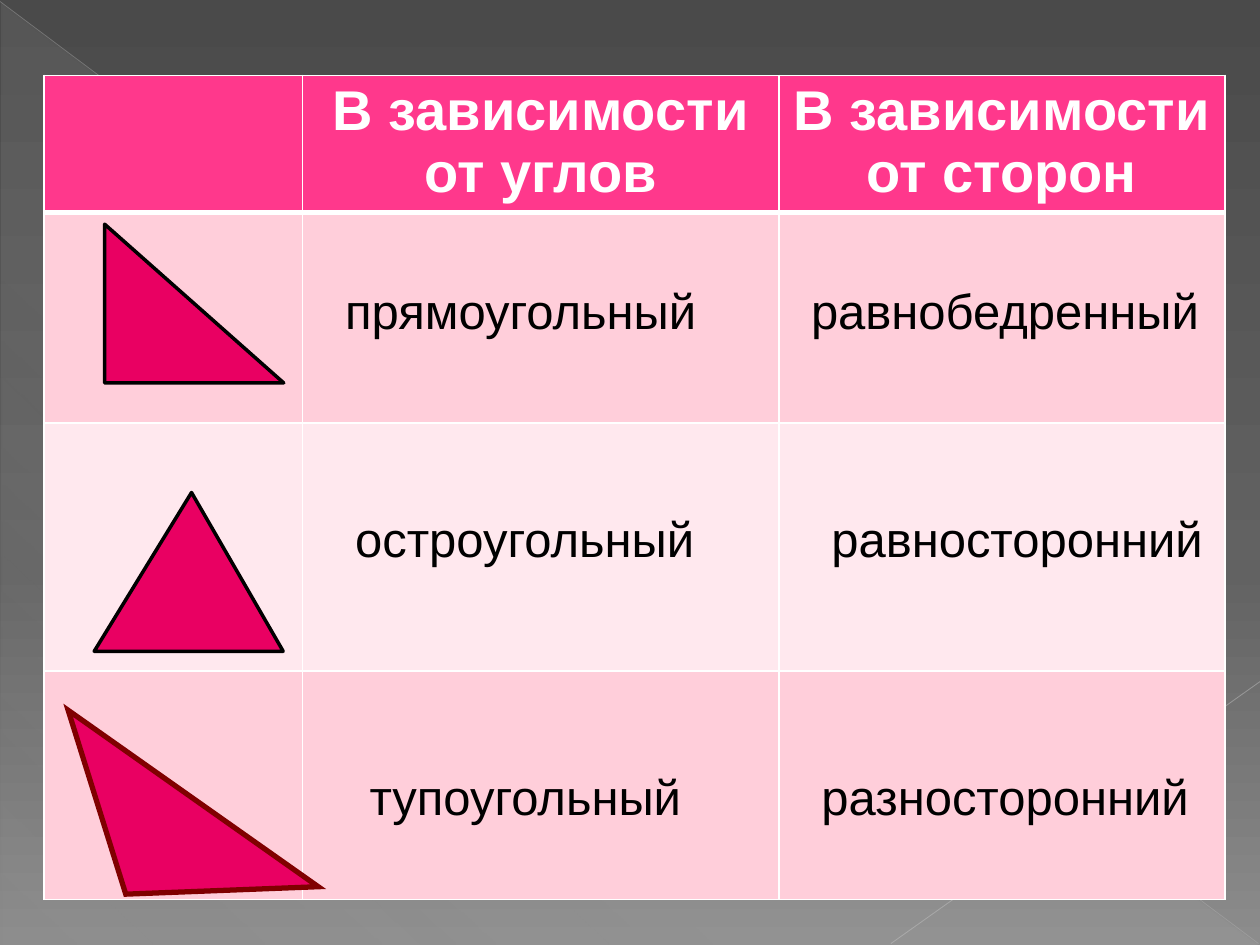
from lxml import etree
from pptx import Presentation
from pptx.dml.color import RGBColor
from pptx.enum.shapes import MSO_CONNECTOR, MSO_SHAPE
from pptx.enum.text import PP_ALIGN
from pptx.oxml.ns import qn
from pptx.util import Cm, Pt

CENTER, LEFT = PP_ALIGN.CENTER, PP_ALIGN.LEFT
RIGHT_TRIANGLE = MSO_SHAPE.RIGHT_TRIANGLE
TRIANGLE = MSO_SHAPE.ISOSCELES_TRIANGLE
STRAIGHT = MSO_CONNECTOR.STRAIGHT


def rgb(value):
    """Turn a hex string into a colour."""
    return RGBColor.from_string(value)


def add_color(parent, value, opacity=100):
    """Append a colour element with an opacity in percent."""
    clr = etree.SubElement(parent, qn("a:srgbClr"), val=value)
    if opacity < 100:
        etree.SubElement(clr, qn("a:alpha"), val=str(opacity * 1000))


def set_gradient(fill, root, stops, angle):
    """Give a fill found under root its gradient stops and angle."""
    fill.gradient()
    gs_lst = next(root.iter(qn("a:gsLst")))
    for gs in list(gs_lst):
        gs_lst.remove(gs)
    for pos, *color in stops:
        gs = etree.SubElement(gs_lst, qn("a:gs"), pos=str(pos * 1000))
        add_color(gs, *color)
    next(root.iter(qn("a:lin"))).set("ang", str(angle * 60000))


def write(tf, text, size=28, color="000000", bold=False, align=LEFT, font="Arial"):
    """Write one formatted paragraph into a text frame."""
    tf.word_wrap = True
    p = tf.paragraphs[0]
    p.alignment = align
    r = p.add_run()
    r.text = text
    r.font.name, r.font.size, r.font.bold = font, Pt(size), bold
    r.font.color.rgb = rgb(color)


class Deck:
    """Hold the style and the current slide."""

    accent, header, bands = "E90062", "FF388C", ("FFCEDA", "FFE8EE")

    def __init__(self):
        """Open a blank slide of the right size."""
        self.prs = Presentation()
        self.prs.slide_width, self.prs.slide_height = Cm(25.4), Cm(19.05)
        self.s = self.prs.slides.add_slide(self.prs.slide_layouts[6])

    def background(self, stops, angle):
        """Paint the slide background."""
        set_gradient(self.s.background.fill, self.s.element, stops, angle)

    def shape(self, kind, box):
        """Add a preset shape without shadow."""
        sp = self.s.shapes.add_shape(kind, *map(Cm, box))
        sp.shadow.inherit = False
        return sp

    def sheen(self, box, stops, angle):
        """Add the translucent background triangle."""
        sp = self.shape(RIGHT_TRIANGLE, box)
        sp.line.fill.background()
        set_gradient(sp.fill, sp.element, stops, angle)

    def line(self, ends, color, width, opacity):
        """Add a thin translucent line."""
        ln = self.s.shapes.add_connector(STRAIGHT, *map(Cm, ends))
        ln.line.width = Pt(width)
        ln.line.color.rgb = rgb(color)
        clr = next(ln.element.iter(qn("a:srgbClr")))
        etree.SubElement(clr, qn("a:alpha"), val=str(opacity * 1000))
        etree.SubElement(ln.element.spPr, qn("a:effectLst"))

    def triangle(self, kind, box, line="000000", width=2, rotation=0, apex=None, miter=False):
        """Add one of the sample triangles."""
        sp = self.shape(kind, box)
        sp.fill.solid()
        sp.fill.fore_color.rgb = rgb(self.accent)
        sp.line.color.rgb = rgb(line)
        sp.line.width = Pt(width)
        sp.rotation = rotation
        if apex is not None:
            sp.adjustments[0] = apex
        if miter:
            ln = next(sp.element.iter(qn("a:ln")))
            etree.SubElement(ln, qn("a:miter"), lim="800000")

    def cell(self, cell, fill, bottom=1):
        """Give a cell its white borders and fill."""
        tc_pr = cell._tc.get_or_add_tcPr()
        for side, width in (("L", 1), ("R", 1), ("T", 1), ("B", bottom)):
            ln = etree.SubElement(tc_pr, qn(f"a:ln{side}"), w=str(Pt(width)))
            add_color(etree.SubElement(ln, qn("a:solidFill")), "FFFFFF")
        cell.fill.solid()
        cell.fill.fore_color.rgb = rgb(fill)
        cell.margin_top = cell.margin_bottom = Cm(0.08)

    def table(self, left, top, cols, rows, titles):
        """Add the banded table with its header titles."""
        frame = self.s.shapes.add_table(
            len(rows), len(cols), Cm(left), Cm(top), Cm(sum(cols)), Cm(sum(rows)))
        tbl = frame.table
        for col, width in zip(tbl.columns, cols):
            col.width = Cm(width)
        for i, (row, height) in enumerate(zip(tbl.rows, rows)):
            row.height = Cm(height)
            for cell in row.cells:
                if i == 0:
                    self.cell(cell, self.header, bottom=3)
                else:
                    self.cell(cell, self.bands[(i - 1) % 2])
        for j, title in enumerate(titles, 1):
            write(tbl.cell(0, j).text_frame, title, size=32, color="FFFFFF",
                  bold=True, align=CENTER)

    def label(self, text, left, top, width):
        """Add a text box with a triangle type."""
        tb = self.s.shapes.add_textbox(Cm(left), Cm(top), Cm(width), Cm(2.24))
        write(tb.text_frame, text)


def main():
    """Build the slide about kinds of triangles."""
    deck = Deck()
    deck.background([(0, "4A4A4A"), (60, "626262"), (100, "8C8C8C")], 90)
    deck.sheen((0.03, 0.05, 25.35, 19),
               [(0, "D2D2D2", 10), (70, "D2D2D2", 8), (100, "D2D2D2", 1)], 133)
    deck.line((0, 0.03, 25.37, 19.02), "BFBFBF", 0.39, 35)
    deck.line((25.4, 13.74, 17.96, 19.02), "C6C6C6", 0.47, 45)
    deck.table(0.89, 1.52, (5.21, 9.6, 8.99), (2.77, 4.24, 5, 4.6),
               ("В зависимости от углов", "В зависимости от сторон"))
    deck.triangle(RIGHT_TRIANGLE, (2.11, 4.52, 3.61, 3.2))
    deck.triangle(TRIANGLE, (1.9, 9.93, 3.81, 3.2), apex=0.515)
    deck.triangle(TRIANGLE, (0.13, 15.88, 6.17, 2.36), line="800000", width=3,
                  rotation=215.2, miter=True)
    labels = (
        (5.54, ("прямоугольный", 6.71, 8.41), ("равнобедренный", 16.1, 8.41)),
        (10.13, ("остроугольный", 6.91, 8.2), ("равносторонний", 16.51, 8.41)),
        (15.32, ("тупоугольный", 7.2, 7.3), ("разносторонний", 16.31, 8)),
    )
    for top, *pair in labels:
        for text, left, width in pair:
            deck.label(text, left, top, width)
    deck.prs.save("out.pptx")


if __name__ == "__main__":
    main()
